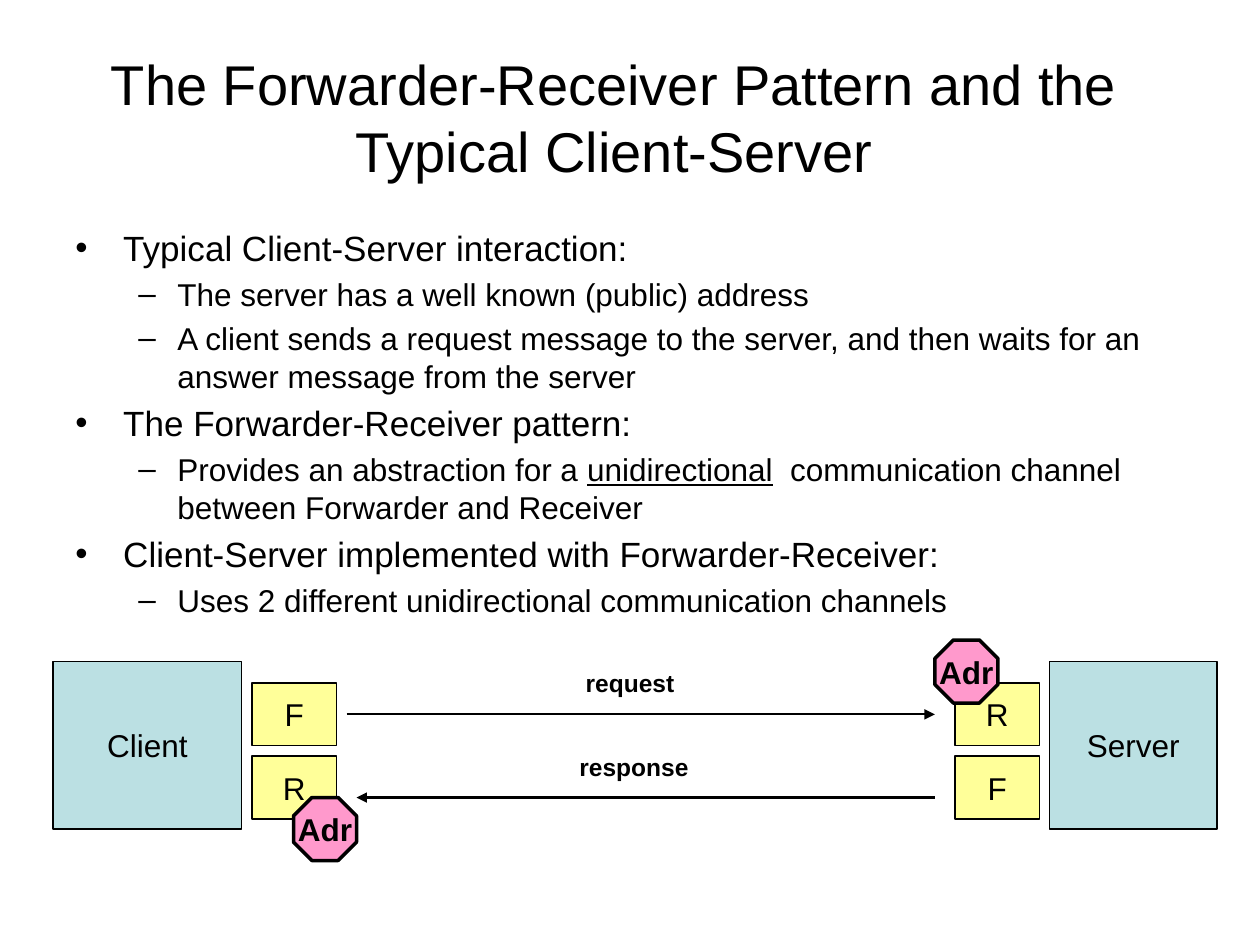
from lxml import etree
from pptx import Presentation
from pptx.dml.color import RGBColor
from pptx.enum.shapes import MSO_CONNECTOR, MSO_SHAPE
from pptx.enum.text import MSO_ANCHOR, MSO_AUTO_SIZE, PP_ALIGN
from pptx.oxml.ns import qn
from pptx.util import Inches, Pt

RECTANGLE, OCTAGON = MSO_SHAPE.RECTANGLE, MSO_SHAPE.OCTAGON
STRAIGHT = MSO_CONNECTOR.STRAIGHT
TOP, MIDDLE = MSO_ANCHOR.TOP, MSO_ANCHOR.MIDDLE
LEFT, CENTER = PP_ALIGN.LEFT, PP_ALIGN.CENTER
FIT_SHAPE = MSO_AUTO_SIZE.SHAPE_TO_FIT_TEXT

FONT = "Arial"
BLACK, BLUE, YELLOW, PINK = "000000", "BBE0E3", "FFFF99", "FF99CC"

# Per outline level: bullet, font size, left margin, hanging indent
LEVELS = [("•", 20, 0.38, 0.38), ("–", 18, 0.81, 0.31)]
OUTLINE = [
    (0, ["Typical Client-Server interaction:"]),
    (1, ["The server has a well known (public) address"]),
    (1, ["A client sends a request message to the server, "
         "and then waits for an answer message from the server"]),
    (0, ["The Forwarder-Receiver pattern:"]),
    (1, ["Provides an abstraction for a ", "unidirectional",
         "  communication channel between Forwarder and Receiver"]),
    (0, ["Client-Server implemented with Forwarder-Receiver:"]),
    (1, ["Uses 2 different unidirectional communication channels"]),
]
UNDERLINED = "unidirectional"


def color(hex_string):
    return RGBColor.from_string(hex_string)


def write(paragraph, text, size=18, bold=False, underline=False, align=LEFT):
    """Append a formatted run to the paragraph."""
    paragraph.alignment = align
    run = paragraph.add_run()
    run.text = text
    font = run.font
    font.name, font.size, font.bold = FONT, Pt(size), bold
    font.underline = underline
    font.color.rgb = color(BLACK)


def add_text_box(slide, left, top, width, height, wrap=True, anchor=TOP):
    box = slide.shapes.add_textbox(*map(Inches, (left, top, width, height)))
    frame = box.text_frame
    frame.word_wrap = wrap
    frame.vertical_anchor = anchor
    return frame


def set_bullet(paragraph, bullet, margin, hanging):
    properties = paragraph._p.get_or_add_pPr()
    properties.set("marL", str(Inches(margin)))
    properties.set("indent", str(-Inches(hanging)))
    etree.SubElement(properties, qn("a:buFont"), typeface=FONT)
    etree.SubElement(properties, qn("a:buChar"), char=bullet)


def add_outline(slide):
    frame = add_text_box(slide, 0.5, 1.75, 9, 4.95)
    for index, (level, parts) in enumerate(OUTLINE):
        paragraph = frame.add_paragraph() if index else frame.paragraphs[0]
        bullet, size, margin, hanging = LEVELS[level]
        paragraph.level = level
        paragraph.space_before = Pt(0.2 * size)
        set_bullet(paragraph, bullet, margin, hanging)
        for part in parts:
            write(paragraph, part, size=size, underline=part == UNDERLINED)


def add_node(slide, text, left, top, width, height, fill,
             kind=RECTANGLE, line_width=0.75, bold=False):
    node = slide.shapes.add_shape(
        kind, *map(Inches, (left, top, width, height)))
    node.shadow.inherit = False
    node.fill.solid()
    node.fill.fore_color.rgb = color(fill)
    node.line.color.rgb = color(BLACK)
    node.line.width = Pt(line_width)
    frame = node.text_frame
    frame.word_wrap = False
    frame.vertical_anchor = MIDDLE
    write(frame.paragraphs[0], text, bold=bold, align=CENTER)


def add_address(slide, left, top):
    add_node(slide, "Adr", left, top, 0.5, 0.5, PINK,
             kind=OCTAGON, line_width=2, bold=True)


def add_arrow(slide, start, end, y):
    arrow = slide.shapes.add_connector(
        STRAIGHT, *map(Inches, (start, y, end, y)))
    arrow.line.color.rgb = color(BLACK)
    arrow.line.width = Pt(1.25)
    etree.SubElement(arrow.line._get_or_add_ln(), qn("a:tailEnd"),
                     type="triangle", w="med", len="med")
    etree.SubElement(arrow._element.spPr, qn("a:effectLst"))


def add_label(slide, text, left, top, width):
    frame = add_text_box(slide, left, top, width, 0.34, wrap=False)
    frame.auto_size = FIT_SHAPE
    write(frame.paragraphs[0], text, size=14, bold=True)


def main():
    presentation = Presentation()
    presentation.slide_width, presentation.slide_height = Inches(10), Inches(7.5)
    slide = presentation.slides.add_slide(presentation.slide_layouts[6])

    title = add_text_box(slide, 0.25, 0.3, 9.25, 1.25, anchor=MIDDLE)
    write(title.paragraphs[0],
          "The Forwarder-Receiver Pattern and the Typical Client-Server",
          size=32, align=CENTER)
    add_outline(slide)

    add_node(slide, "Client", 0.42, 5.25, 1.5, 1.33, BLUE)
    add_node(slide, "Server", 8.33, 5.25, 1.33, 1.33, BLUE)
    add_arrow(slide, 2.75, 7.42, 5.67)
    add_arrow(slide, 7.42, 2.83, 6.33)
    add_label(slide, "request", 4.55, 5.25, 0.91)
    add_label(slide, "response", 4.5, 5.92, 1.07)
    for left, letters in ((2, "FR"), (7.58, "RF")):
        for letter, top in zip(letters, (5.42, 6)):
            add_node(slide, letter, left, top, 0.67, 0.5, YELLOW)
    add_address(slide, 2.33, 6.33)
    add_address(slide, 7.42, 5.08)

    presentation.save("out.pptx")


if __name__ == "__main__":
    main()
